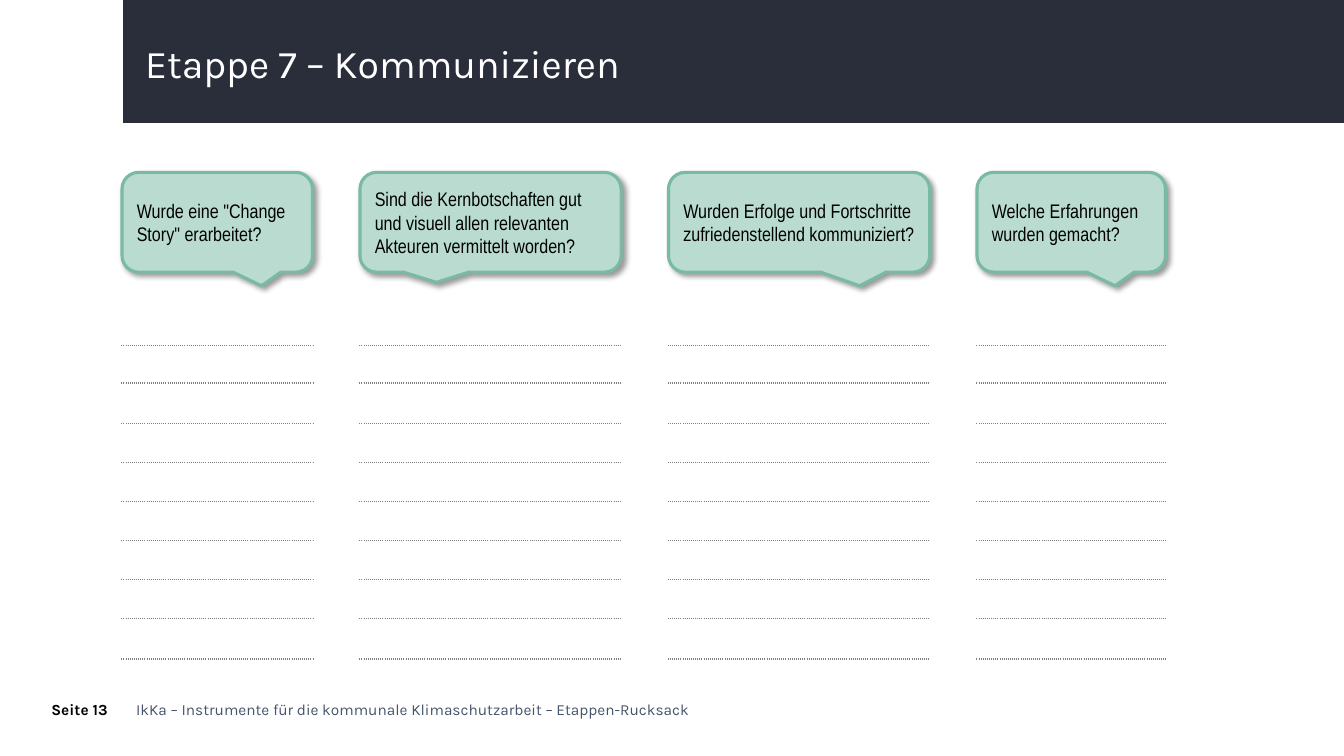
from dataclasses import dataclass

from lxml import etree
from pptx import Presentation
from pptx.dml.color import RGBColor
from pptx.enum.shapes import MSO_SHAPE
from pptx.enum.text import MSO_ANCHOR, PP_ALIGN
from pptx.oxml import parse_xml
from pptx.util import Inches, Pt

CALLOUT = MSO_SHAPE.ROUNDED_RECTANGULAR_CALLOUT
RECTANGLE = MSO_SHAPE.RECTANGLE
MIDDLE, TOP = MSO_ANCHOR.MIDDLE, MSO_ANCHOR.TOP
LEFT = PP_ALIGN.LEFT
NS = "http://schemas.openxmlformats.org/drawingml/2006/main"


@dataclass(frozen=True)
class Theme:
    banner: str = "2A2E3B"
    title: str = "FFFFFF"
    text: str = "000000"
    footer: str = "44546A"
    bubble: str = "BADCD0"
    bubble_edge: str = "7ABAA3"
    writing_line: str = "808080"
    heading_font: str = "Karla"
    question_font: str = "Arial Narrow"
    title_size: int = 28
    question_size: int = 14
    footer_size: int = 11


theme = Theme()


def write(shape, text, font, size, color, anchor=TOP, bold=False):
    frame = shape.text_frame
    frame.word_wrap = True
    frame.vertical_anchor = anchor
    frame.text = text
    paragraph = frame.paragraphs[0]
    paragraph.alignment = LEFT
    run_font = paragraph.runs[0].font
    run_font.name, run_font.size, run_font.bold = font, Pt(size), bold
    run_font.color.rgb = RGBColor.from_string(color)
    return frame


def add_dotted_border(cell, side):
    cell.fill.background()
    border = parse_xml(
        f'<a:{side} xmlns:a="{NS}" w="12700"><a:solidFill>'
        f'<a:srgbClr val="{theme.writing_line}"/></a:solidFill>'
        f'<a:prstDash val="sysDot"/></a:{side}>')
    properties = cell._tc.get_or_add_tcPr()
    properties.insert(len(properties) - 1, border)


prs = Presentation()
prs.slide_width, prs.slide_height = Inches(13.33), Inches(7.5)
slide = prs.slides.add_slide(prs.slide_layouts[6])
shapes = slide.shapes

# Title banner
banner = shapes.add_shape(RECTANGLE, Inches(1.22), 0, Inches(12.11), Inches(1.22))
banner.shadow.inherit = False
banner.fill.solid()
banner.fill.fore_color.rgb = RGBColor.from_string(theme.banner)
banner.line.fill.background()
title = shapes.add_textbox(Inches(1.34), Inches(0.35), Inches(11.5), Inches(0.61))
title_frame = write(title, "Etappe 7 – Kommunizieren", theme.heading_font,
                    theme.title_size, theme.title, MIDDLE)
title_frame.paragraphs[0].line_spacing = 0.9

# Footer: left, width, height, text, colour, bold
footer_parts = [
    (1.35, 5.57, 0.19, "IkKa – Instrumente für die kommunale Klimaschutzarbeit – Etappen-Rucksack",
     theme.footer, False),
    (0.51, 0.73, 0.24, "Seite 13", theme.text, True),
]
for left, width, height, text, color, bold in footer_parts:
    footer = shapes.add_textbox(Inches(left), Inches(6.95), Inches(width), Inches(height))
    frame = write(footer, text, theme.heading_font, theme.footer_size, color, bold=bold)
    frame.margin_left = frame.margin_right = frame.margin_top = frame.margin_bottom = 0

# Question columns: left, width, pointer position, question
pointer_right, pointer_left = (0.232, 0.637), (-0.207, 0.602)
questions = [
    (1.21, 1.89, pointer_right, 'Wurde eine "Change Story" erarbeitet?'),
    (3.57, 2.59, pointer_left,
     "Sind die Kernbotschaften gut und visuell allen relevanten Akteuren vermittelt worden?"),
    (6.63, 2.59, pointer_right,
     "Wurden Erfolge und Fortschritte zufriedenstellend kommuniziert?"),
    (9.69, 1.87, pointer_right, "Welche Erfahrungen wurden gemacht?"),
]
row_heights = [0.37, 0.37, 0.4, 0.39, 0.39, 0.38, 0.39, 0.39, 0.4]

for left, width, pointer, question in questions:
    # Speech bubble
    bubble = shapes.add_shape(CALLOUT, Inches(left), Inches(1.71), Inches(width), Inches(0.99))
    bubble.adjustments[0], bubble.adjustments[1] = pointer
    bubble.adjustments[2] = 0.167
    bubble.fill.solid()
    bubble.fill.fore_color.rgb = RGBColor.from_string(theme.bubble)
    bubble.line.color.rgb = RGBColor.from_string(theme.bubble_edge)
    bubble.line.width = Pt(2.25)
    bubble.shadow.inherit = False
    effects = bubble._element.spPr.find(f"{{{NS}}}effectLst")
    shadow = etree.SubElement(effects, f"{{{NS}}}outerShdw", blurRad=str(Pt(4)),
                              dist=str(Pt(3)), dir="2700000", algn="tl", rotWithShape="0")
    shadow_color = etree.SubElement(shadow, f"{{{NS}}}srgbClr", val=theme.text)
    etree.SubElement(shadow_color, f"{{{NS}}}alpha", val="40000")
    write(bubble, question, theme.question_font, theme.question_size, theme.text, MIDDLE)

    # Dotted writing lines
    answers = shapes.add_table(len(row_heights), 1, Inches(left), Inches(3.06),
                               Inches(width), Inches(sum(row_heights))).table
    answers.first_row = answers.horz_banding = False
    for index, height in enumerate(row_heights):
        answers.rows[index].height = Inches(height)
        cell = answers.cell(index, 0)
        cell.margin_top = cell.margin_bottom = 0
        if index:
            add_dotted_border(cell, "lnT")
        add_dotted_border(cell, "lnB")

prs.save("out.pptx")
